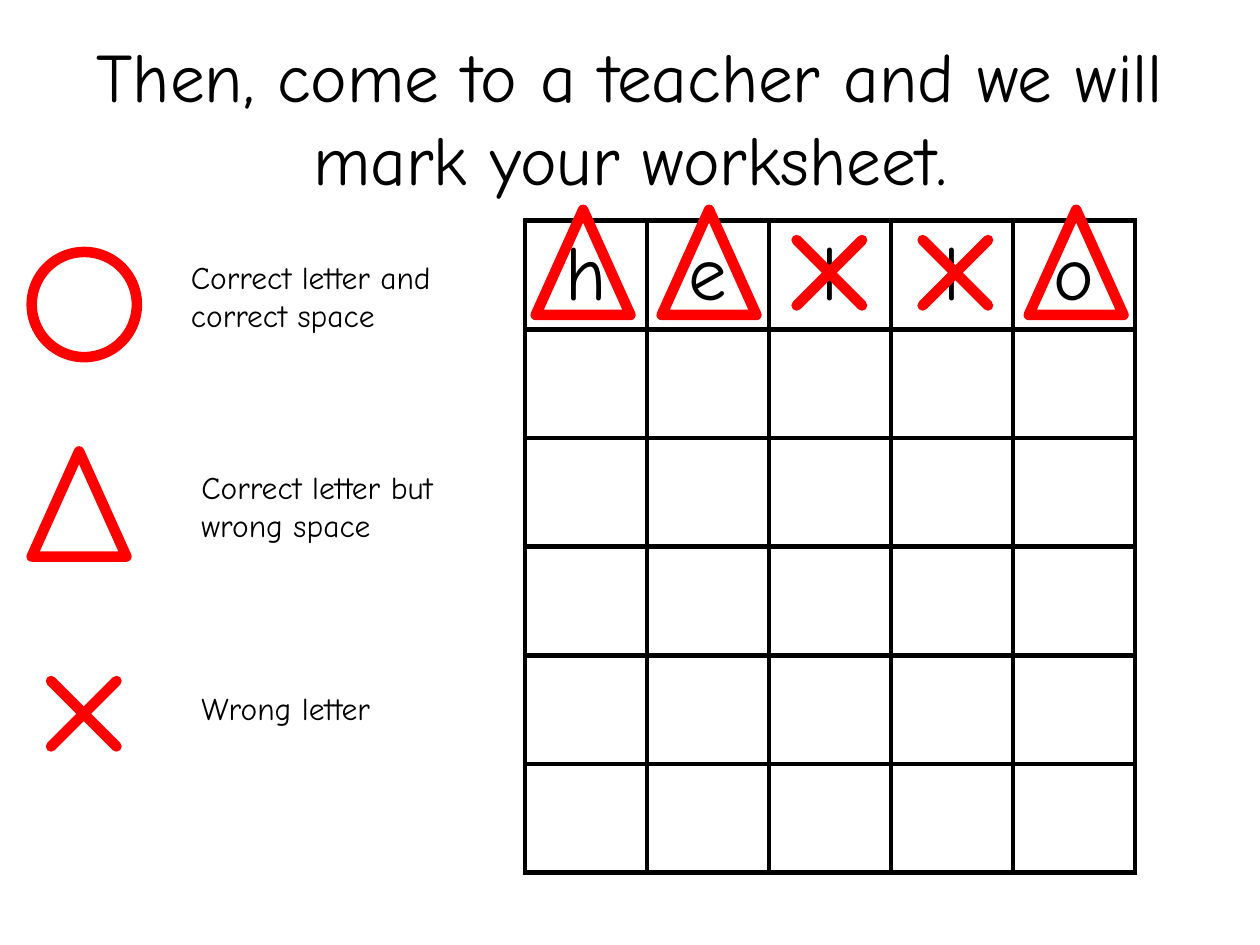
from dataclasses import dataclass

from lxml import etree
from pptx import Presentation
from pptx.dml.color import RGBColor
from pptx.enum.shapes import MSO_SHAPE
from pptx.enum.text import MSO_ANCHOR, PP_ALIGN
from pptx.oxml.ns import qn
from pptx.util import Cm, Pt

CIRCLE, TRIANGLE, CROSS = MSO_SHAPE.OVAL, MSO_SHAPE.ISOSCELES_TRIANGLE, MSO_SHAPE.MATH_MULTIPLY
TOP, MIDDLE = MSO_ANCHOR.TOP, MSO_ANCHOR.MIDDLE
LEFT, CENTER = PP_ALIGN.LEFT, PP_ALIGN.CENTER

COLORS = {"ink": "000000", "mark": "FF0000", "cross": "4F81BD"}
FONT = "Comic Neue"
GUESS = "hello"
ROWS = 6
COLUMN_WIDTH, ROW_HEIGHT = 2.46, 2.19
MARK_SIZES = {CIRCLE: (2.12, 2.12), TRIANGLE: (1.91, 2.12), CROSS: (2.54, 2.54)}
GUESS_TOP = 4.23


@dataclass(frozen=True)
class Mark:
    symbol: int
    left: float
    top: float


@dataclass(frozen=True)
class Label:
    wording: str
    left: float
    top: float
    width: float
    height: float
    size: float = 18
    align: int = LEFT
    anchor: int = TOP


LABELS = [
    Label("Then, come to a teacher and we will mark your worksheet.",
          1.27, 0.76, 22.86, 3.18, 39.6, CENTER, MIDDLE),
    Label("Correct letter and correct space", 3.6, 5.08, 5.93, 1.8),
    Label("Correct letter but wrong space", 3.81, 9.31, 5.93, 1.8),
    Label("Wrong letter", 3.81, 13.76, 5.93, 1.02),
]
MARKS = [
    Mark(TRIANGLE, 10.8, GUESS_TOP),
    Mark(TRIANGLE, 13.34, GUESS_TOP),
    Mark(TRIANGLE, 20.74, GUESS_TOP),
    Mark(TRIANGLE, 0.64, 9.1),
    Mark(CROSS, 15.45, GUESS_TOP),
    Mark(CROSS, 17.99, GUESS_TOP),
    Mark(CROSS, 0.42, 13.12),
    Mark(CIRCLE, 0.64, 5.08),
]


def color(name: str) -> RGBColor:
    """Look up a named colour."""
    return RGBColor.from_string(COLORS[name])


def write(paragraph, wording: str, size: float, align: int) -> None:
    """Add one styled run to a paragraph."""
    paragraph.alignment = align
    run = paragraph.add_run()
    run.text = wording
    run.font.name = FONT
    run.font.size = Pt(size)
    run.font.color.rgb = color("ink")


def draw_label(slide, label: Label) -> None:
    """Add a wrapped text box."""
    box = slide.shapes.add_textbox(
        Cm(label.left), Cm(label.top), Cm(label.width), Cm(label.height))
    frame = box.text_frame
    frame.word_wrap = True
    frame.vertical_anchor = label.anchor
    write(frame.paragraphs[0], label.wording, label.size, label.align)


def border_cell(cell) -> None:
    """Draw all four borders of a cell, leaving it unfilled."""
    cell.fill.background()
    properties = cell._tc.get_or_add_tcPr()
    for position, side in enumerate(("a:lnL", "a:lnR", "a:lnT", "a:lnB")):
        border = etree.Element(qn(side), w=str(Pt(3)))
        fill = etree.SubElement(border, qn("a:solidFill"))
        etree.SubElement(fill, qn("a:srgbClr"), val=COLORS["ink"])
        properties.insert(position, border)


def draw_worksheet(slide) -> None:
    """Add the guess grid with the first guess filled in."""
    columns = len(GUESS)
    grid = slide.shapes.add_table(
        ROWS, columns, Cm(10.58), Cm(4.45),
        Cm(columns * COLUMN_WIDTH), Cm(ROWS * ROW_HEIGHT)).table
    grid.first_row = False
    grid.horz_banding = False
    for cell in grid.iter_cells():
        border_cell(cell)
    for column, letter in enumerate(GUESS):
        cell = grid.cell(0, column)
        cell.vertical_anchor = MIDDLE
        write(cell.text_frame.paragraphs[0], letter, 44, CENTER)


def draw_mark(slide, mark: Mark) -> None:
    """Add one red marking symbol."""
    width, height = MARK_SIZES[mark.symbol]
    symbol = slide.shapes.add_shape(
        mark.symbol, Cm(mark.left), Cm(mark.top), Cm(width), Cm(height))
    symbol.shadow.inherit = False
    symbol.line.color.rgb = color("mark")
    symbol.line.width = Pt(6)
    if mark.symbol == CROSS:
        symbol.adjustments[0] = 0
        symbol.fill.solid()
        symbol.fill.fore_color.rgb = color("cross")
    else:
        symbol.fill.background()


def main() -> None:
    """Build the marking guide slide."""
    presentation = Presentation()
    presentation.slide_width, presentation.slide_height = Cm(25.4), Cm(19.05)
    slide = presentation.slides.add_slide(presentation.slide_layouts[6])
    title, *meanings = LABELS
    draw_label(slide, title)
    draw_worksheet(slide)
    for mark in MARKS:
        draw_mark(slide, mark)
    for meaning in meanings:
        draw_label(slide, meaning)
    presentation.save("out.pptx")


if __name__ == "__main__":
    main()
